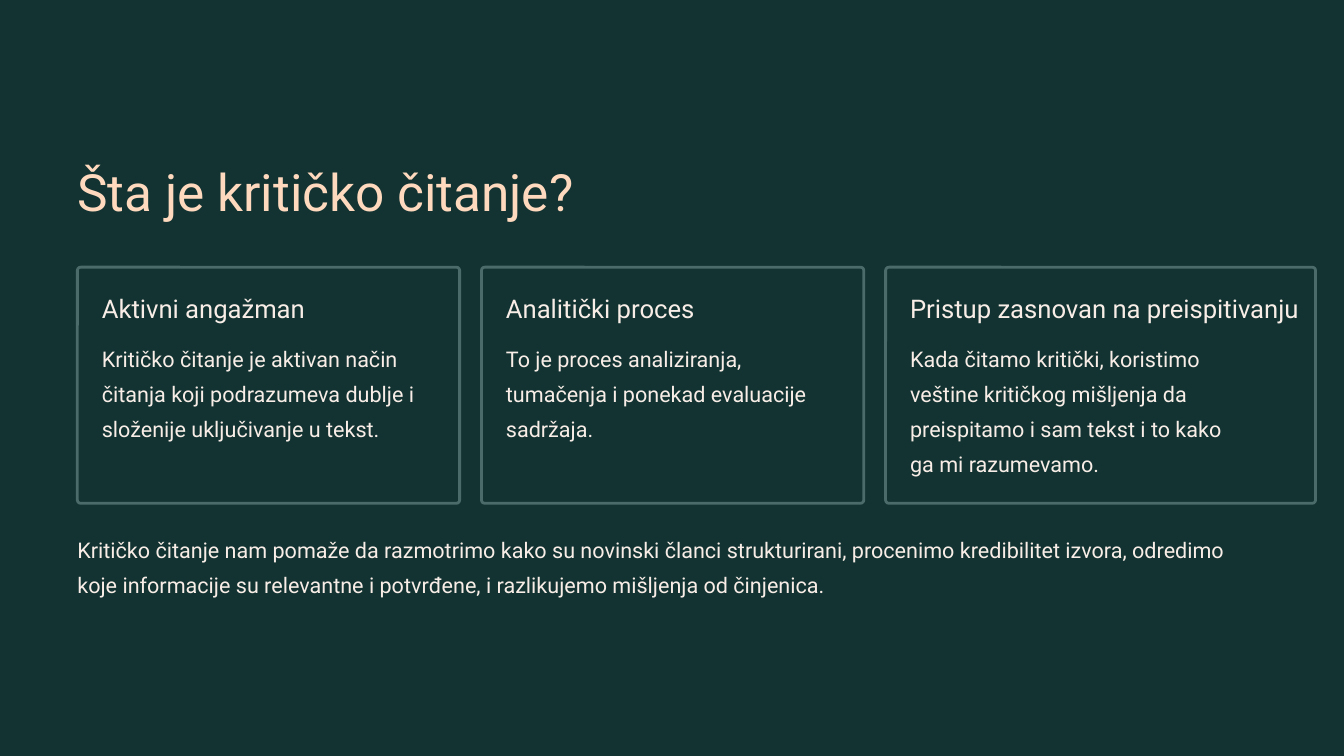
from dataclasses import dataclass

from pptx import Presentation
from pptx.dml.color import RGBColor as Rgb
from pptx.enum.shapes import MSO_SHAPE as Shape
from pptx.enum.text import MSO_ANCHOR as Anchor, MSO_AUTO_SIZE as Fit, PP_ALIGN as Align
from pptx.util import Cm, Pt


@dataclass(frozen=True)
class Theme:
    """Colours, font and type styles as (size, line spacing, colour)."""
    back: str = "123332"
    edge: str = "4A6B6A"
    font: str = "Roboto"
    title: tuple = (44, 55, "FFD9BE")
    head: tuple = (22, 27.5, "F9EEE7")
    body: tuple = (18.5, 30, "F9EEE7")


THEME = Theme()
CARDS = [
    ("Aktivni angažman", 11.56,
     "Kritičko čitanje je aktivan način čitanja koji podrazumeva dublje i "
     "složenije uključivanje u tekst."),
    ("Analitički proces", 11.56,
     "To je proces analiziranja, tumačenja i ponekad evaluacije sadržaja."),
    ("Pristup zasnovan na preispitivanju", 13,
     "Kada čitamo kritički, koristimo veštine kritičkog mišljenja da "
     "preispitamo i sam tekst i to kako ga mi razumevamo."),
]
CLOSING = (
    "Kritičko čitanje nam pomaže da razmotrimo kako su novinski članci "
    "strukturirani, procenimo kredibilitet izvora, odredimo koje informacije "
    "su relevantne i potvrđene, i razlikujemo mišljenja od činjenica."
)


def style(shape, text, look, wrap=True):
    """Fill a text shape and format it in one of the theme's type styles."""
    size, lead, color = look
    frame = shape.text_frame
    frame.text = text
    frame.auto_size = Fit.NONE
    frame.word_wrap = wrap
    frame.vertical_anchor = Anchor.TOP
    frame.margin_left = frame.margin_right = 0
    frame.margin_top = frame.margin_bottom = 0
    para = frame.paragraphs[0]
    para.alignment = Align.LEFT
    para.line_spacing = Pt(lead)
    para.space_before = Pt(0)
    font = para.runs[0].font
    font.name, font.size = THEME.font, Pt(size)
    font.color.rgb = Rgb.from_string(color)


def add_title(slide, text, left, top, width, height):
    """Move and format the title placeholder."""
    title = slide.shapes.title
    title.left, title.top = Cm(left), Cm(top)
    title.width, title.height = Cm(width), Cm(height)
    style(title, text, THEME.title, wrap=False)


def add_text(slide, text, look, left, top, width, height, wrap=True):
    """Place a text box in the given box."""
    box = slide.shapes.add_textbox(Cm(left), Cm(top), Cm(width), Cm(height))
    style(box, text, look, wrap)


def add_card(slide, head, body, left, top, width, height):
    """Draw an outlined card with a heading and a paragraph."""
    card = slide.shapes.add_shape(
        Shape.ROUNDED_RECTANGLE, Cm(left), Cm(top), Cm(width), Cm(height))
    card.adjustments[0] = 0.014
    card.shadow.inherit = False
    card.fill.solid()
    card.fill.fore_color.rgb = Rgb.from_string(THEME.back)
    card.line.color.rgb = Rgb.from_string(THEME.edge)
    card.line.width = Pt(2.4)
    pad = 0.74
    add_text(slide, head, THEME.head, left + pad, top + pad, 7.9, 0.97, wrap=False)
    add_text(slide, body, THEME.body, left + pad, top + 2.11, 10.06, 4.27)


def main():
    """Build the slide and save it."""
    deck = Presentation()
    deck.slide_width, deck.slide_height = Cm(40.64), Cm(22.86)
    slide = deck.slides.add_slide(deck.slide_layouts[5])
    fill = slide.background.fill
    fill.solid()
    fill.fore_color.rgb = Rgb.from_string(THEME.back)

    edge, gap = 2.34, 0.66
    add_title(slide, "Šta je kritičko čitanje?", edge, 4.78, 17.55, 1.96)
    left = edge
    for head, width, body in CARDS:
        add_card(slide, head, body, left, 8.08, width, 7.14)
        left += width + gap
    add_text(slide, CLOSING, THEME.body, edge, 15.95, 36, 2.13)
    deck.save("out.pptx")


if __name__ == "__main__":
    main()
